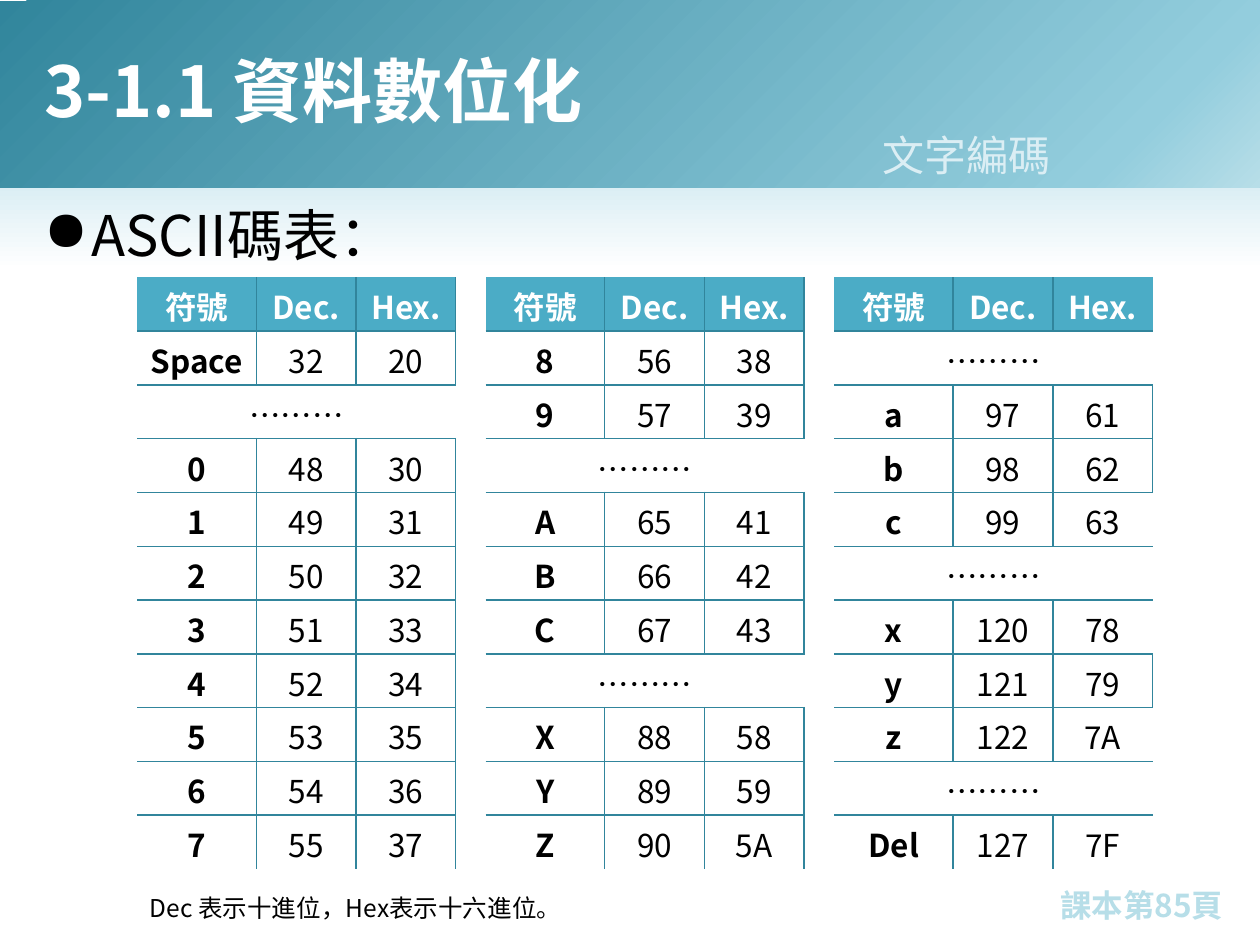
from dataclasses import dataclass

from lxml import etree
from pptx import Presentation
from pptx.dml.color import RGBColor
from pptx.enum.shapes import MSO_SHAPE
from pptx.enum.text import MSO_ANCHOR, MSO_AUTO_SIZE, PP_ALIGN
from pptx.oxml.ns import qn
from pptx.util import Pt

RECTANGLE = MSO_SHAPE.RECTANGLE
MIDDLE = MSO_ANCHOR.MIDDLE
FIT_SHAPE, FIT_NONE = MSO_AUTO_SIZE.SHAPE_TO_FIT_TEXT, MSO_AUTO_SIZE.NONE
LEFT, CENTER, RIGHT = PP_ALIGN.LEFT, PP_ALIGN.CENTER, PP_ALIGN.RIGHT

FONT = "Noto Sans CJK SC"
COLORS = {
    "white": "FFFFFF",
    "black": "000000",
    "header": "4BACC6",
    "border": "31859C",
    "sky": "93CDDD",
    "pale": "B7DEE8",
    "mist": "DBEEF4",
}
NO_TABLE_STYLE = "{2D5ABB26-0587-4C30-8999-92F81FD0307C}"

DOTS = "………"
HEADINGS = ("符號", "Dec.", "Hex.")
GROUPS = (
    ("Space", DOTS, *"01234567"),
    ("8", "9", DOTS, *"ABC", DOTS, *"XYZ"),
    (DOTS, *"abc", DOTS, *"xyz", DOTS, "Del"),
)
CODES = {"Space": 32, "Del": 127}
GROUP_WIDTHS = (68, 57, 57)
GAP_WIDTH = 17.15
ROW_HEIGHT = 30.75


@dataclass
class Band:
    top: float
    height: float
    angle: float
    stops: tuple


@dataclass
class Label:
    text: str
    left: float
    top: float
    width: float
    height: float
    size: float
    color: str
    bold: bool = False
    align: PP_ALIGN = LEFT
    wrap: bool = True
    bullet: str = ""
    fit: MSO_AUTO_SIZE = FIT_SHAPE


BANDS = (
    Band(106.5, 433.5, 270, ((0, "mist"), (11, "white"), (100, "white"))),
    Band(0.5, 106.5, 315, ((0, "border"), (88, "sky"), (100, "pale"))),
)
TITLE = Label("3-1.1 資料數位化", 18, 6, 570, 90, 40, "white", bold=True, fit=FIT_NONE)
LABELS = (
    Label("ASCII碼表：", 18, 111, 684, 384, 32, "black", bullet="●", fit=FIT_NONE),
    Label("文字編碼", 496, 70.5, 111.5, 36, 24, "mist", align=RIGHT, wrap=False),
    Label("課本第85頁", 592.5, 502.5, 120, 29, 18, "pale", bold=True, align=CENTER),
    Label("Dec 表示十進位，Hex表示十六進位。", 78.5, 507, 253.5, 24.5, 14, "black", wrap=False),
)


def color_of(name: str) -> RGBColor:
    return RGBColor.from_string(COLORS[name])


def format_paragraph(paragraph, size: float, color: str, bold: bool, align: PP_ALIGN) -> None:
    paragraph.alignment = align
    paragraph.font.size = Pt(size)
    paragraph.font.bold = bold
    paragraph.font.color.rgb = color_of(color)
    paragraph.font.name = FONT
    latin = paragraph._p.find(".//" + qn("a:latin"))
    east_asian = etree.Element(qn("a:ea"), typeface=FONT)
    latin.addnext(east_asian)


def add_bullet(paragraph, character: str) -> None:
    properties = paragraph._p.get_or_add_pPr()
    properties.set("marL", str(Pt(27)))
    properties.set("indent", str(Pt(-27)))
    etree.SubElement(properties, qn("a:buChar"), char=character)


def fill_label(shape, label: Label) -> None:
    shape.left, shape.top = Pt(label.left), Pt(label.top)
    shape.width, shape.height = Pt(label.width), Pt(label.height)
    frame = shape.text_frame
    frame.text = label.text
    frame.word_wrap = label.wrap
    frame.auto_size = label.fit
    paragraph = frame.paragraphs[0]
    if label.bullet:
        add_bullet(paragraph, label.bullet)
    format_paragraph(paragraph, label.size, label.color, label.bold, label.align)


def add_band(slide, band: Band) -> None:
    shape = slide.shapes.add_shape(RECTANGLE, 0, Pt(band.top), Pt(720), Pt(band.height))
    shape.shadow.inherit = False
    shape.line.fill.background()
    shape.fill.gradient()
    shape.fill.gradient_angle = band.angle
    stops = shape.element.find(".//" + qn("a:gsLst"))
    stops.clear()
    for position, color in band.stops:
        stop = etree.SubElement(stops, qn("a:gs"), pos=str(position * 1000))
        etree.SubElement(stop, qn("a:srgbClr"), val=COLORS[color])


def add_borders(cell, sides: list) -> None:
    properties = cell._tc.get_or_add_tcPr()
    for side in sides:
        line = etree.SubElement(properties, qn(f"a:ln{side}"), w=str(Pt(1)))
        fill = etree.SubElement(line, qn("a:solidFill"))
        etree.SubElement(fill, qn("a:srgbClr"), val=COLORS["border"])


def group_rows(symbols: tuple) -> list:
    rows = [HEADINGS]
    for symbol in symbols:
        if symbol == DOTS:
            rows.append((DOTS, "", ""))
        else:
            code = CODES.get(symbol) or ord(symbol)
            rows.append((symbol, str(code), f"{code:X}"))
    return rows


def fill_group(table, first_column: int, symbols: tuple) -> None:
    rows = group_rows(symbols)
    for row, texts in enumerate(rows):
        is_header, is_dots = row == 0, texts[0] == DOTS
        for column, text in enumerate(texts):
            cell = table.cell(row, first_column + column)
            cell.text = text
            bold = is_header or (column == 0 and not is_dots)
            color = "white" if is_header else "black"
            format_paragraph(cell.text_frame.paragraphs[0], 18, color, bold, CENTER)
            shown = {
                "L": column > 0 and not is_dots,
                "R": column < 2 and not is_dots,
                "T": row > 0,
                "B": row < len(rows) - 1,
            }
            add_borders(cell, [side for side, visible in shown.items() if visible])
            if is_header:
                cell.fill.solid()
                cell.fill.fore_color.rgb = color_of("header")
        if is_dots:
            table.cell(row, first_column).merge(table.cell(row, first_column + 2))


def add_code_table(slide) -> None:
    widths = (*GROUP_WIDTHS, GAP_WIDTH) * 2 + GROUP_WIDTHS
    row_count = len(GROUPS[0]) + 1
    frame = slide.shapes.add_table(
        row_count, len(widths), Pt(78.5), Pt(158.5), Pt(sum(widths)), Pt(ROW_HEIGHT * row_count)
    )
    table = frame.table
    table.first_row = table.horz_banding = False
    frame.element.find(".//" + qn("a:tableStyleId")).text = NO_TABLE_STYLE
    for column, width in zip(table.columns, widths):
        column.width = Pt(width)
    for row in table.rows:
        row.height = Pt(ROW_HEIGHT)
    for cell in table.iter_cells():
        cell.vertical_anchor = MIDDLE
        cell.margin_left = cell.margin_right = Pt(3.6)
        cell.margin_top, cell.margin_bottom = Pt(2), 0
    for index, symbols in enumerate(GROUPS):
        fill_group(table, index * 4, symbols)
    for cell in table.iter_cells():
        if cell.text != "" and cell.text in HEADINGS:
            continue
        cell.fill.background()


def main() -> None:
    presentation = Presentation()
    presentation.slide_width, presentation.slide_height = Pt(720), Pt(540)
    slide = presentation.slides.add_slide(presentation.slide_layouts[5])
    for band in BANDS:
        add_band(slide, band)
    title = slide.shapes.title
    slide.shapes.element.append(title.element)
    fill_label(title, TITLE)
    title.text_frame.vertical_anchor = MIDDLE
    for label in LABELS[:-1]:
        fill_label(slide.shapes.add_textbox(0, 0, 0, 0), label)
    add_code_table(slide)
    fill_label(slide.shapes.add_textbox(0, 0, 0, 0), LABELS[-1])
    presentation.save("out.pptx")


if __name__ == "__main__":
    main()
